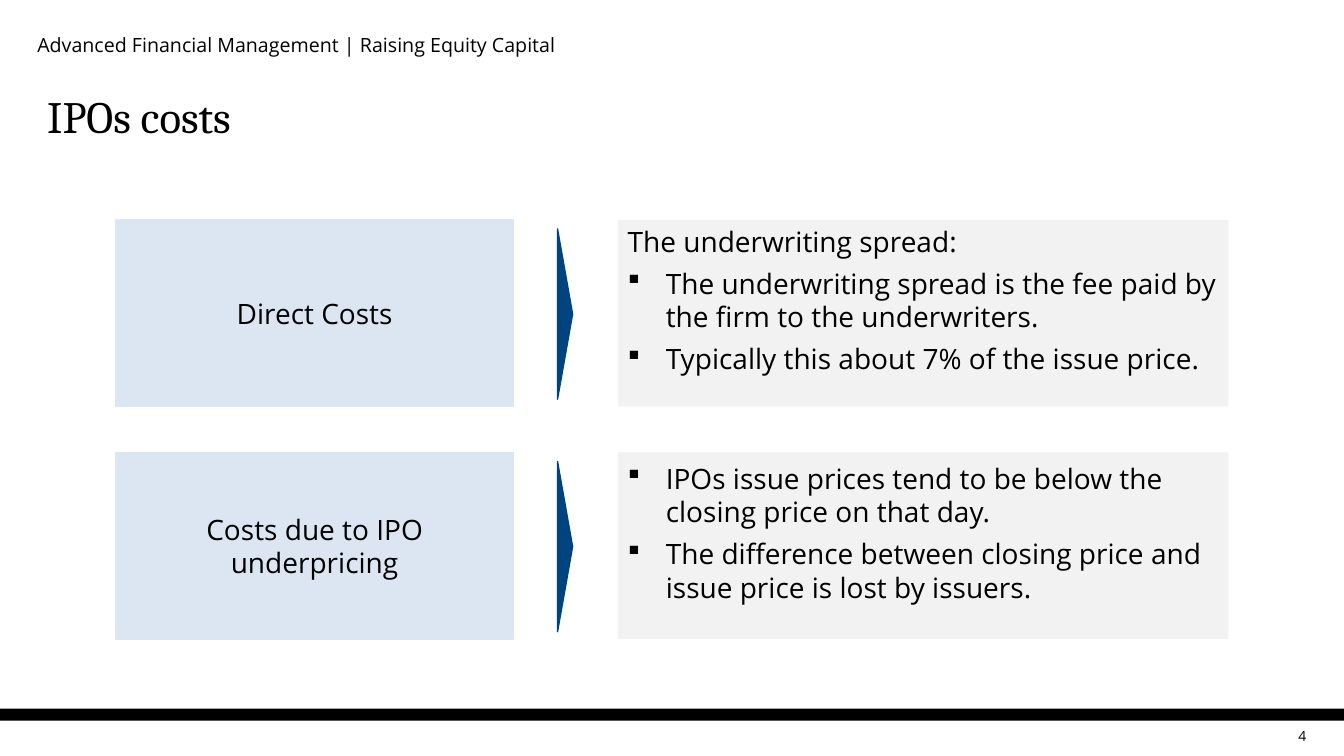
from lxml.etree import SubElement
from pptx import Presentation
from pptx.dml.color import RGBColor
from pptx.enum.shapes import MSO_SHAPE as Kind
from pptx.enum.text import MSO_ANCHOR as Anchor, PP_ALIGN as Align
from pptx.oxml.ns import qn
from pptx.util import Cm, Pt

BLACK = RGBColor(0x00, 0x00, 0x00)
NAVY = RGBColor(0x00, 0x43, 0x7F)
PALE = RGBColor(0xDC, 0xE6, 0xF2)
GREY = RGBColor(0xF2, 0xF2, 0xF2)
SANS, SERIF = "Open Sans", "Cambria"
WIDTH, HEIGHT = 33.87, 19.05

ROWS = [
    ("Direct Costs", [
        ("The underwriting spread:", False),
        ("The underwriting spread is the fee paid by the firm to the underwriters.", True),
        ("Typically this about 7% of the issue price.", True),
    ]),
    ("Costs due to IPO underpricing", [
        ("IPOs issue prices tend to be below the closing price on that day.", True),
        ("The difference between closing price and issue price is lost by issuers.", True),
    ]),
]


def add_run(para, words, size, font=SANS):
    run = para.add_run()
    run.text = words
    run.font.size = Pt(size)
    run.font.name = font
    run.font.color.rgb = BLACK


def add_bullet(para):
    props = para._p.get_or_add_pPr()
    props.set("marL", str(Cm(0.96)))
    props.set("indent", str(-Cm(0.96)))
    SubElement(props, qn("a:buFont")).set("typeface", "Wingdings")
    SubElement(props, qn("a:buChar")).set("char", "§")


def add_text(slide, box, words, size, align, anchor=Anchor.MIDDLE, font=SANS, inset=True):
    frame = slide.shapes.add_textbox(*map(Cm, box)).text_frame
    frame.word_wrap = True
    frame.vertical_anchor = anchor
    if not inset:
        frame.margin_left = frame.margin_right = 0
        frame.margin_top = frame.margin_bottom = 0
    para = frame.paragraphs[0]
    para.alignment = align
    add_run(para, words, size, font)


def add_block(slide, kind, box, fill, line=None):
    shape = slide.shapes.add_shape(kind, *map(Cm, box))
    shape.shadow.inherit = False
    shape.fill.solid()
    shape.fill.fore_color.rgb = fill
    if line is None:
        shape.line.fill.background()
    else:
        shape.line.color.rgb = line
        shape.line.width = Pt(1)
    frame = shape.text_frame
    frame.word_wrap = True
    frame.vertical_anchor = Anchor.MIDDLE
    return shape


def add_label(slide, box, words):
    frame = add_block(slide, Kind.RECTANGLE, box, PALE, PALE).text_frame
    para = frame.paragraphs[0]
    para.alignment = Align.CENTER
    add_run(para, words, 20)


def add_arrow(slide, box):
    left, top, width, height = box
    turned = (left + (width - height) / 2, top + (height - width) / 2, height, width)
    add_block(slide, Kind.ISOSCELES_TRIANGLE, turned, NAVY, NAVY).rotation = 90


def add_detail(slide, box, points):
    frame = add_block(slide, Kind.RECTANGLE, box, GREY).text_frame
    frame.margin_bottom = Cm(0.79)
    for index, (words, bullet) in enumerate(points):
        para = frame.add_paragraph() if index else frame.paragraphs[0]
        para.alignment = Align.LEFT
        if index:
            para.space_before = Pt(6)
        if bullet:
            add_bullet(para)
        add_run(para, words, 20)


def add_row(slide, box, label, points):
    left, top, width, height = box
    add_label(slide, (left, top, 10.04, height), label)
    add_arrow(slide, (left + 11.14, top + 0.23, 0.38, 4.29))
    add_detail(slide, (left + 12.66, top, width - 12.66, height), points)


def add_head(slide, box):
    left, top, width, height = box
    add_text(slide, (left, top, width, 0.89),
             "Advanced Financial Management | Raising Equity Capital",
             14, Align.LEFT, inset=False)
    add_text(slide, (left, top + 1.09, width, height - 1.09),
             "IPOs costs", 32, Align.LEFT, Anchor.BOTTOM, SERIF)


def add_foot(slide, box):
    left, top, width, height = box
    add_block(slide, Kind.RECTANGLE, (left, top, width, 0.3), BLACK)
    add_text(slide, (left + width - 2.27, top + 0.38, 1.32, 0.61),
             "4", 10, Align.RIGHT, inset=False)


def add_body(slide, box):
    left, top, width, height = box
    tall = 4.7
    step = (height - tall) / (len(ROWS) - 1)
    for index, (label, points) in enumerate(ROWS):
        add_row(slide, (left, top + index * step, width, tall), label, points)


def main():
    deck = Presentation()
    deck.slide_width, deck.slide_height = Cm(WIDTH), Cm(HEIGHT)
    slide = deck.slides.add_slide(deck.slide_layouts[6])
    add_foot(slide, (0, 17.86, WIDTH, HEIGHT - 17.86))
    add_head(slide, (0.94, 0.69, 32, 3.02))
    add_body(slide, (2.91, 5.54, 28.05, 10.56))
    deck.save("out.pptx")


if __name__ == "__main__":
    main()
